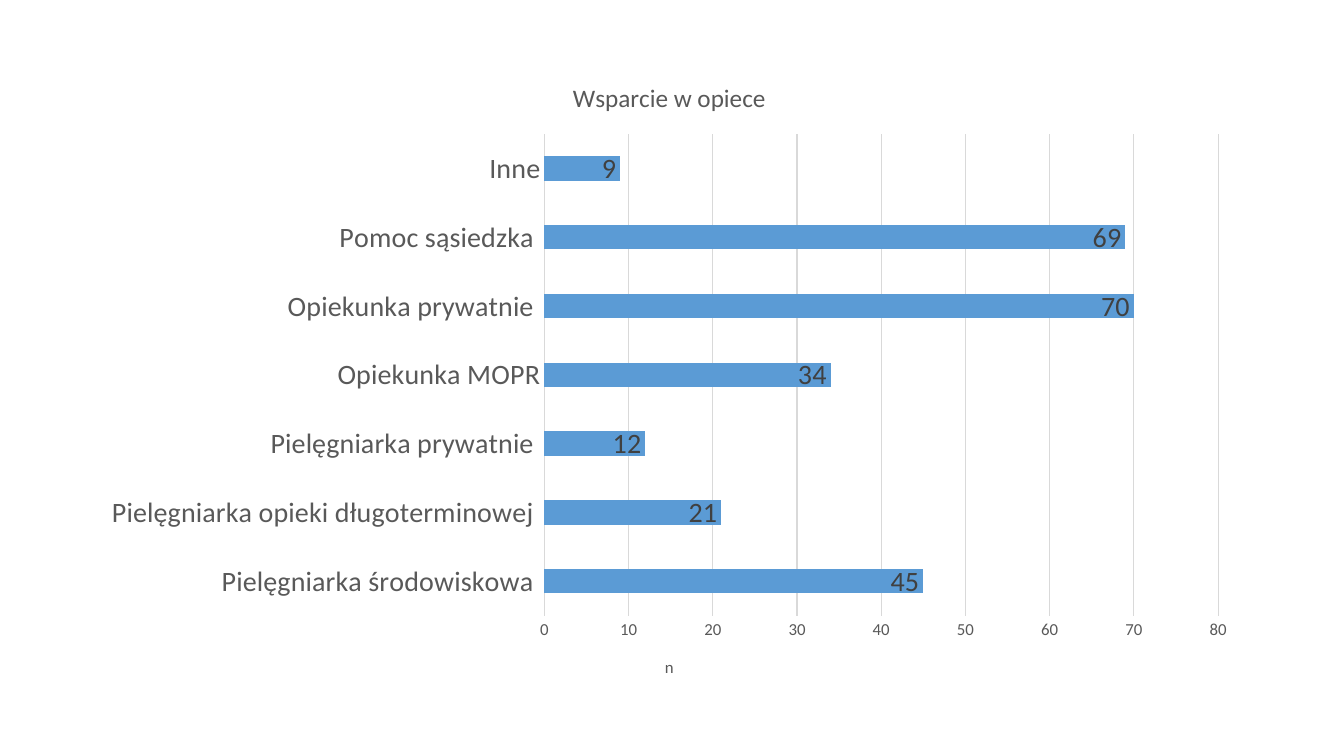
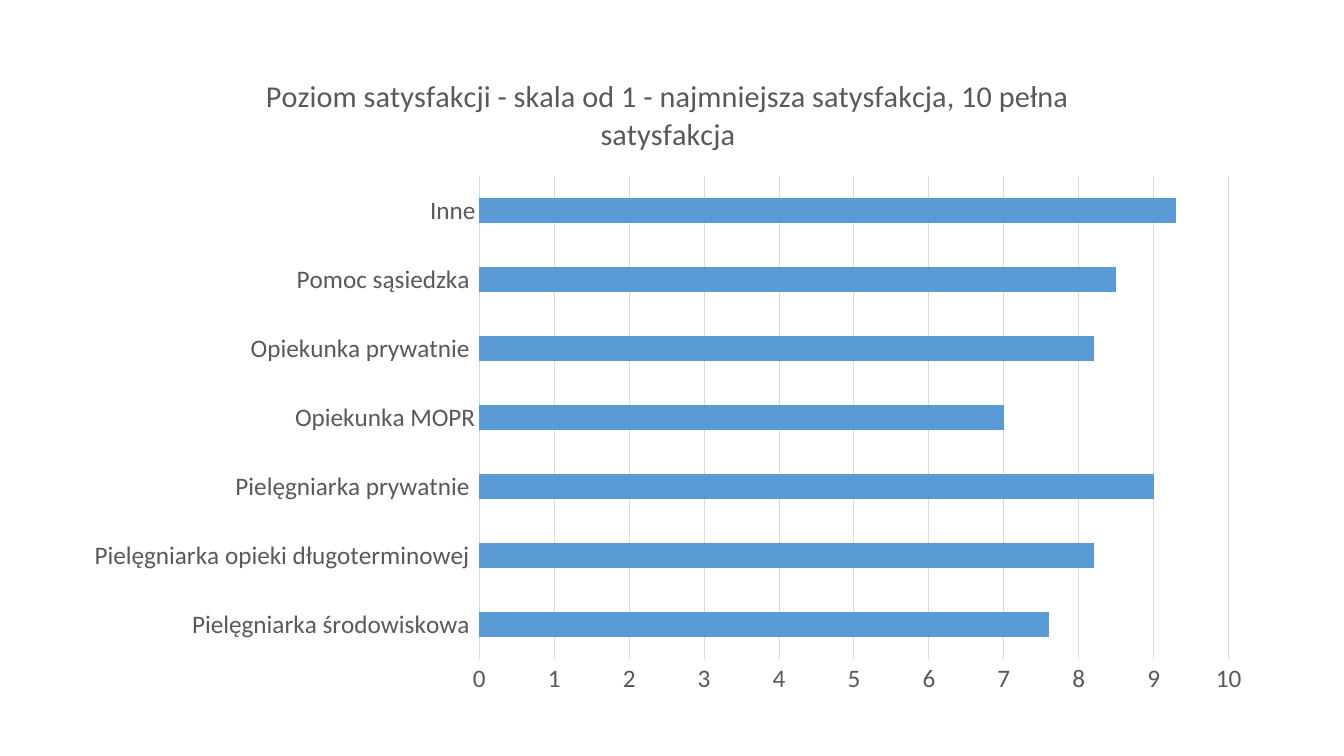
"""Build two bar chart slides about support in care."""
from pptx import Presentation
from pptx.chart.data import CategoryChartData
from pptx.dml.color import RGBColor
from pptx.enum.chart import XL_CHART_TYPE as ChartType
from pptx.enum.chart import XL_LABEL_POSITION as LabelPosition
from pptx.enum.chart import XL_TICK_MARK as TickMark
from pptx.util import Inches, Pt

SLIDE_WIDTH, SLIDE_HEIGHT = Inches(13.33), Inches(7.5)
FONT = "Calibri"
BAR_BLUE = RGBColor(0x5B, 0x9B, 0xD5)
TEXT_GREY = RGBColor(0x59, 0x59, 0x59)
LABEL_GREY = RGBColor(0x40, 0x40, 0x40)
LINE_GREY = RGBColor(0xD9, 0xD9, 0xD9)
SUPPORT_KINDS = [
    "Pielęgniarka środowiskowa ",
    "Pielęgniarka opieki długoterminowej ",
    "Pielęgniarka prywatnie ",
    "Opiekunka MOPR",
    "Opiekunka prywatnie ",
    "Pomoc sąsiedzka ",
    "Inne",
]


def style_font(font, size, color=TEXT_GREY):
    font.name = FONT
    font.size = Pt(size)
    font.bold = False
    font.color.rgb = color


def write_text(text_frame, text, size, color=TEXT_GREY):
    run = text_frame.paragraphs[0].add_run()
    run.text = text
    style_font(run.font, size, color)


def style_line(line):
    line.color.rgb = LINE_GREY
    line.width = Pt(0.75)


def style_axis(axis, size):
    axis.major_tick_mark = axis.minor_tick_mark = TickMark.NONE
    style_font(axis.tick_labels.font, size)


def style_value_axis(axis, size, maximum, step, title):
    style_axis(axis, size)
    axis.minimum_scale, axis.maximum_scale = 0, maximum
    axis.major_unit = step
    axis.tick_labels.number_format = "General"
    axis.tick_labels.number_format_is_linked = False
    axis.format.line.fill.background()
    axis.has_major_gridlines = True
    style_line(axis.major_gridlines.format.line)
    axis.has_title = bool(title)
    if title:
        write_text(axis.axis_title.text_frame, title, size)


def show_values(plot, size):
    plot.has_data_labels = True
    labels = plot.data_labels
    labels.show_value = True
    labels.position = LabelPosition.INSIDE_END
    style_font(labels.font, size, LABEL_GREY)


def add_bar_chart_slide(presentation, title, values, area, title_size,
                        category_size, value_size, maximum, step,
                        value_title=None, label_size=None):
    slide = presentation.slides.add_slide(presentation.slide_layouts[6])
    data = CategoryChartData()
    data.categories = SUPPORT_KINDS
    data.add_series("Series 1", values)
    left, top, width, height = area
    chart = slide.shapes.add_chart(
        ChartType.BAR_CLUSTERED,
        round(left * SLIDE_WIDTH), round(top * SLIDE_HEIGHT),
        round(width * SLIDE_WIDTH), round(height * SLIDE_HEIGHT), data).chart
    chart.has_legend = False
    chart.has_title = True
    chart.chart_title.include_in_layout = False
    write_text(chart.chart_title.text_frame, title, title_size)

    style_axis(chart.category_axis, category_size)
    style_line(chart.category_axis.format.line)
    style_value_axis(chart.value_axis, value_size, maximum, step, value_title)

    plot = chart.plots[0]
    plot.gap_width = 182
    plot.vary_by_categories = False
    fill = plot.series[0].format.fill
    fill.solid()
    fill.fore_color.rgb = BAR_BLUE
    if label_size:
        show_values(plot, label_size)


def main():
    presentation = Presentation()
    presentation.slide_width = SLIDE_WIDTH
    presentation.slide_height = SLIDE_HEIGHT
    add_bar_chart_slide(
        presentation, "Wsparcie w opiece", [45, 21, 12, 34, 70, 69, 9],
        area=(0.066, 0.076, 0.864, 0.849), title_size=18,
        category_size=20, value_size=12, maximum=80, step=10,
        value_title="n", label_size=20)
    add_bar_chart_slide(
        presentation,
        "Poziom satysfakcji - skala od 1 - najmniejsza satysfakcja, "
        "10 pełna satysfakcja",
        [7.6, 8.2, 9, 7, 8.2, 8.5, 9.3],
        area=(0.0525, 0.067, 0.889, 0.868), title_size=21.6,
        category_size=18, value_size=18, maximum=10, step=1)
    presentation.save("out.pptx")


if __name__ == "__main__":
    main()
